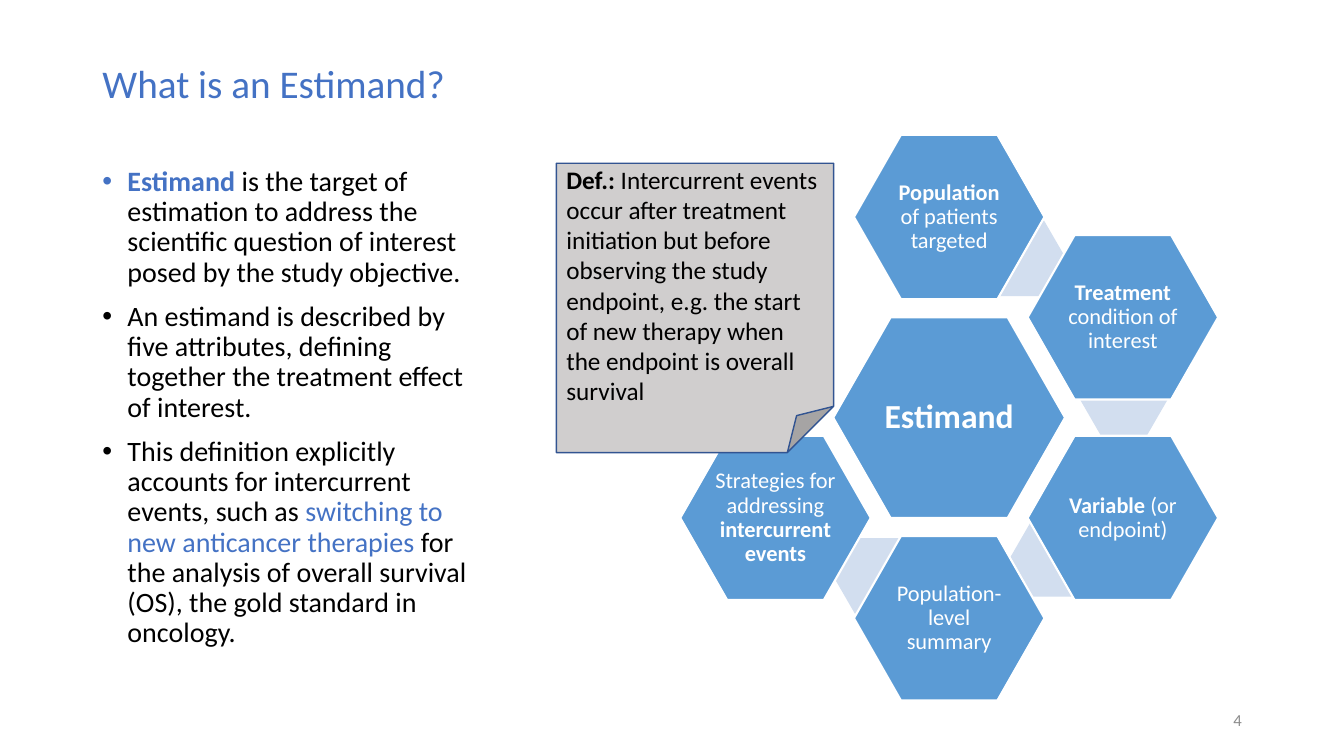
import dataclasses
import math

import lxml.etree
import pptx
import pptx.dml.color
import pptx.enum.shapes
import pptx.enum.text
import pptx.oxml.ns
import pptx.util

KIND = pptx.enum.shapes.MSO_SHAPE
ALIGN = pptx.enum.text.PP_ALIGN
ANCHOR = pptx.enum.text.MSO_ANCHOR


@dataclasses.dataclass(frozen=True)
class Theme:
    font: str = "Calibri"
    accent: str = "4472C4"
    ink: str = "000000"
    white: str = "FFFFFF"
    hexa: str = "5B9BD5"
    bridge: str = "D2DEEF"
    note: str = "D0CECE"
    edge: str = "325491"
    gray: str = "8C8C8C"
    title: int = 28
    hub: int = 24
    body: int = 20
    memo: int = 18
    leaf: int = 16
    page: int = 12


class Deck:
    COLS = 40
    ROWS = 22.5

    def __init__(self, theme):
        self.theme = theme
        self.show = pptx.Presentation()
        self.show.slide_width = pptx.util.Emu(12192000)
        self.show.slide_height = pptx.util.Emu(6858000)
        self.slide = self.show.slides.add_slide(self.show.slide_layouts[5])

    def box(self, left, top, width, height):
        col = self.show.slide_width / self.COLS
        row = self.show.slide_height / self.ROWS
        return [pptx.util.Emu(round(size)) for size in
                (left * col, top * row, width * col, height * row)]

    def color(self, code):
        return pptx.dml.color.RGBColor.from_string(code)

    def fill_in(self, para, parts, size, color, align=ALIGN.LEFT, lines=0.9):
        para.alignment = align
        para.line_spacing = lines
        for text, bold, tint in parts:
            run = para.add_run()
            run.text = text
            font = run.font
            font.name = self.theme.font
            font.size = pptx.util.Pt(size)
            font.bold = bold
            font.color.rgb = self.color(tint or color)

    def title(self, text, area):
        head = self.slide.shapes.title
        head.left, head.top, head.width, head.height = self.box(*area)
        frame = head.text_frame
        frame.vertical_anchor = ANCHOR.MIDDLE
        self.fill_in(frame.paragraphs[0], [(text, False, None)],
                     self.theme.title, self.theme.accent)

    def label(self, area):
        frame = self.slide.shapes.add_textbox(*self.box(*area)).text_frame
        frame.word_wrap = True
        return frame

    def page(self, text, area):
        frame = self.label(area)
        frame.vertical_anchor = ANCHOR.MIDDLE
        self.fill_in(frame.paragraphs[0], [(text, False, None)],
                     self.theme.page, self.theme.gray, ALIGN.RIGHT)

    def list(self, items, area):
        frame = self.label(area)
        for spot, parts in enumerate(items):
            para = frame.add_paragraph() if spot else frame.paragraphs[0]
            self.fill_in(para, parts, self.theme.body, self.theme.ink)
            para.space_before = pptx.util.Pt(10)
            props = para._p.get_or_add_pPr()
            props.set("marL", "228600")
            props.set("indent", "-228600")
            face = lxml.etree.SubElement(props, pptx.oxml.ns.qn("a:buFont"))
            face.set("typeface", "Arial")
            mark = lxml.etree.SubElement(props, pptx.oxml.ns.qn("a:buChar"))
            mark.set("char", "•")

    def shape(self, kind, area, fill, edge=None, weight=1):
        form = self.slide.shapes.add_shape(kind, *self.box(*area))
        form.shadow.inherit = False
        form.fill.solid()
        form.fill.fore_color.rgb = self.color(fill)
        if edge:
            form.line.color.rgb = self.color(edge)
            form.line.width = pptx.util.Pt(weight)
        else:
            form.line.fill.background()
        return form

    def hexa(self, mid, size, fill, slant, edge=None):
        area = (mid[0] - size[0] / 2, mid[1] - size[1] / 2, *size)
        form = self.shape(KIND.HEXAGON, area, fill, edge, 1.5)
        form.adjustments[0] = slant
        form.adjustments[1] = 1.155
        return form

    def cell(self, mid, size, parts, points):
        form = self.hexa(mid, size, self.theme.hexa, 0.286, self.theme.white)
        frame = form.text_frame
        frame.word_wrap = True
        frame.vertical_anchor = ANCHOR.MIDDLE
        pad = pptx.util.Inches(0.02)
        frame.margin_left = frame.margin_right = pad
        frame.margin_top = frame.margin_bottom = pad
        self.fill_in(frame.paragraphs[0], parts, points, self.theme.white,
                     ALIGN.CENTER)

    def note(self, parts, area):
        form = self.shape(KIND.FOLDED_CORNER, area, self.theme.note,
                          self.theme.edge)
        frame = form.text_frame
        frame.word_wrap = True
        frame.vertical_anchor = ANCHOR.MIDDLE
        self.fill_in(frame.paragraphs[0], parts, self.theme.memo,
                     self.theme.ink, lines=1.0)


def main():
    theme = Theme()
    deck = Deck(theme)
    deck.page("4", (28.26, 20.85, 9, 1.2))
    deck.title("What is an Estimand?", (2.75, 1.2, 34.5, 2.7))
    deck.list([
        [("Estimand ", True, theme.accent),
         ("is the target of estimation to address the scientific question "
          "of interest posed by the study objective.", False, None)],
        [("An estimand is described by five attributes, defining together "
          "the treatment effect of interest.", False, None)],
        [("This definition explicitly accounts for intercurrent events, "
          "such as ", False, None),
         ("switching to new anticancer therapies ", False, theme.accent),
         ("for the analysis of overall survival (OS), the gold standard in "
          "oncology.", False, None)],
    ], (2.75, 4.83, 11.7, 14.28))

    hub = (28.25, 12.43)
    for across, down in [(2.17, -4.74), (5.2, -0.54), (3.1, 4.2),
                         (-2.15, 4.71)]:
        deck.hexa((hub[0] + across, hub[1] + down), (2.61, 2.25),
                  theme.bridge, 0.289)
    deck.cell(hub, (6.9, 5.97), [("Estimand", True, None)], theme.hub)

    leaves = [
        [("Population ", True, None), ("of patients targeted", False, None)],
        [("Treatment ", True, None), ("condition of interest", False, None)],
        [("Variable", True, None), (" (or endpoint)", False, None)],
        [("Population-level summary", False, None)],
        [("Strategies for addressing ", False, None),
         ("intercurrent events", True, None)],
    ]
    reach = 5.97
    for step, parts in enumerate(leaves):
        turn = math.radians(60 * step)
        mid = (hub[0] + reach * math.sin(turn),
               hub[1] - reach * math.cos(turn))
        deck.cell(mid, (5.67, 4.89), parts, theme.leaf)

    deck.note([
        ("Def.:", True, None),
        (" Intercurrent events occur after treatment initiation but before "
         "observing the study endpoint, e.g. the start of new therapy when "
         "the endpoint is overall survival", False, None),
    ], (16.56, 4.86, 8.25, 8.61))
    deck.show.save("out.pptx")


if __name__ == "__main__":
    main()
